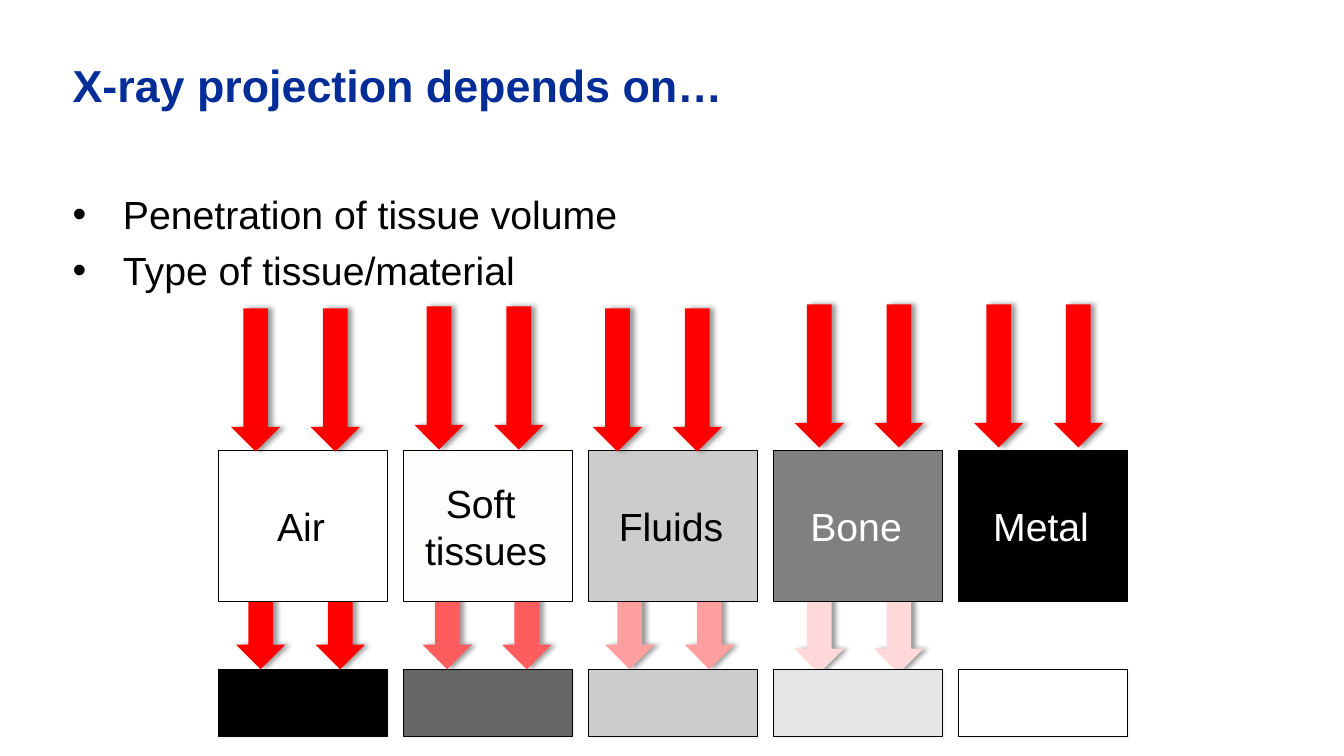
"""Build the slide on how tissue type affects X-ray projection."""
import pptx
import pptx.dml.color
import pptx.enum.shapes
import pptx.enum.text
import pptx.oxml
import pptx.oxml.ns
import pptx.util
from lxml import etree

Inches = pptx.util.Inches
Pt = pptx.util.Pt
RGBColor = pptx.dml.color.RGBColor
MSO_SHAPE = pptx.enum.shapes.MSO_SHAPE
MSO_ANCHOR = pptx.enum.text.MSO_ANCHOR
PP_ALIGN = pptx.enum.text.PP_ALIGN
qn = pptx.oxml.ns.qn

NAVY = RGBColor(0x04, 0x2D, 0x98)
BLACK = RGBColor(0x00, 0x00, 0x00)
WHITE = RGBColor(0xFF, 0xFF, 0xFF)
OFF_WHITE = RGBColor(0xFD, 0xFD, 0xFC)
PALE_GREY = RGBColor(0xE6, 0xE6, 0xE6)
LIGHT_GREY = RGBColor(0xCC, 0xCC, 0xCC)
MID_GREY = RGBColor(0x80, 0x80, 0x80)
DARK_GREY = RGBColor(0x66, 0x66, 0x66)
WARM_GREY = RGBColor(0xF6, 0xF4, 0xF2)
RED = RGBColor(0xFF, 0x00, 0x00)
RED_STRONG = RGBColor(0xFF, 0x5D, 0x5D)
RED_SOFT = RGBColor(0xFF, 0x9F, 0x9F)
RED_FAINT = RGBColor(0xFF, 0xD9, 0xD9)

TITLE_FONT = {"name": "Arial", "size": Pt(32), "bold": True}
BODY_FONT = {"name": "Arial", "size": Pt(28), "bold": False}
ARROW_SHADOW = {"color": BLACK, "alpha": 40, "blur": 4, "dist": 3, "angle": 0}
FILM_SHADOW = {"color": WARM_GREY, "alpha": 75, "blur": 0, "dist": 2, "angle": 45}

LEFT, PITCH, WIDTH = 2.17, 1.835, 1.67
ARROW_WIDTH, ARROW_HEIGHT, ARROW_GAP = 0.49, 1.42, 0.79

MATERIALS = [
    {"lines": ["Air"], "fill": WHITE, "text": BLACK, "film": BLACK,
     "beam": (2.29, 3.06), "exit": (2.34, 5.22, RED)},
    {"lines": ["Soft ", "tissues"], "fill": OFF_WHITE, "text": BLACK, "film": DARK_GREY,
     "beam": (4.11, 3.04), "exit": (4.19, 5.22, RED_STRONG)},
    {"lines": ["Fluids"], "fill": LIGHT_GREY, "text": BLACK, "film": LIGHT_GREY,
     "beam": (5.88, 3.06), "exit": (6.0, 5.22, RED_SOFT)},
    {"lines": ["Bone"], "fill": MID_GREY, "text": WHITE, "film": PALE_GREY,
     "beam": (7.88, 3.02), "exit": (7.88, 5.26, RED_FAINT)},
    {"lines": ["Metal"], "fill": BLACK, "text": WHITE, "film": WHITE,
     "beam": (9.66, 3.02), "exit": None},
]


class SlideBuilder:
    """Hold the style and the current slide."""

    def __init__(self, prs):
        self.s = prs.slides.add_slide(prs.slide_layouts[5])

    def place(self, sp, x, y, w, h):
        box = {"left": x, "top": y, "width": w, "height": h}
        for name, value in box.items():
            setattr(sp, name, Inches(value))

    def format_frame(self, tf, margins, anchor, wrap):
        names = ("margin_left", "margin_top", "margin_right", "margin_bottom")
        values = dict(zip(names, map(Inches, margins)))
        values.update(vertical_anchor=anchor, word_wrap=wrap)
        for name, value in values.items():
            setattr(tf, name, value)

    def add_lines(self, tf, lines, style, color, align, bullet=False):
        for i, line in enumerate(lines):
            p = tf.paragraphs[0] if i == 0 else tf.add_paragraph()
            p.alignment = align
            if bullet:
                pPr = p._p.get_or_add_pPr()
                pPr.set("marL", str(Inches(0.5)))
                pPr.set("indent", str(-Inches(0.5)))
                etree.SubElement(pPr, qn("a:buFont"), typeface="Arial")
                etree.SubElement(pPr, qn("a:buChar"), char="•")
                if i:
                    p.space_before = Pt(6)
            r = p.add_run()
            r.text = line
            for name, value in style.items():
                setattr(r.font, name, value)
            r.font.color.rgb = color

    def title(self, text):
        sp = self.s.shapes.title
        self.place(sp, 0.72, 0.57, 11.89, 1.06)
        self.format_frame(sp.text_frame, (0, 0, 0, 0), MSO_ANCHOR.TOP, True)
        self.add_lines(sp.text_frame, [text], TITLE_FONT, NAVY, PP_ALIGN.LEFT)

    def bullets(self, lines):
        sp = self.s.shapes.add_textbox(Inches(0.72), Inches(1.89), Inches(10.4), Inches(1.15))
        self.format_frame(sp.text_frame, (0, 0, 0, 0), MSO_ANCHOR.TOP, True)
        self.add_lines(sp.text_frame, lines, BODY_FONT, BLACK, PP_ALIGN.LEFT, bullet=True)

    def shape(self, kind, x, y, w, h, fill, shadow=None):
        sp = self.s.shapes.add_shape(kind, Inches(x), Inches(y), Inches(w), Inches(h))
        sp.fill.solid()
        sp.fill.fore_color.rgb = fill
        sp.shadow.inherit = False
        if shadow:
            effects = sp._element.spPr.find(qn("a:effectLst"))
            outer = etree.SubElement(
                effects, qn("a:outerShdw"), blurRad=str(Pt(shadow["blur"])),
                dist=str(Pt(shadow["dist"])), dir=str(shadow["angle"] * 60000),
                algn="ctr", rotWithShape="0")
            color = etree.SubElement(outer, qn("a:srgbClr"), val=str(shadow["color"]))
            etree.SubElement(color, qn("a:alpha"), val=str(shadow["alpha"] * 1000))
        return sp

    def arrow_pair(self, x, y, fill):
        for i in range(2):
            sp = self.shape(MSO_SHAPE.DOWN_ARROW, x + i * ARROW_GAP, y,
                            ARROW_WIDTH, ARROW_HEIGHT, fill, ARROW_SHADOW)
            sp.line.fill.background()

    def block(self, column, y, h, fill, shadow=None):
        sp = self.shape(MSO_SHAPE.RECTANGLE, LEFT + column * PITCH, y, WIDTH, h, fill, shadow)
        sp.line.color.rgb = BLACK
        sp.line.width = Pt(0.75)
        return sp

    def material(self, column, lines, fill, color):
        tf = self.block(column, 4.47, 1.5, fill).text_frame
        self.format_frame(tf, (0.06, 0.06, 0.1, 0.06), MSO_ANCHOR.MIDDLE, False)
        self.add_lines(tf, lines, BODY_FONT, color, PP_ALIGN.CENTER)


def main():
    prs = pptx.Presentation()
    prs.slide_width, prs.slide_height = Inches(13.33), Inches(7.5)
    slide = SlideBuilder(prs)
    slide.title("X-ray projection depends on…")
    slide.bullets(["Penetration of tissue volume", "Type of tissue/material"])
    for column, m in enumerate(MATERIALS):
        if m["exit"]:
            slide.arrow_pair(*m["exit"])
        slide.material(column, m["lines"], m["fill"], m["text"])
        slide.block(column, 6.64, 0.67, m["film"], FILM_SHADOW)
        slide.arrow_pair(*m["beam"], RED)
    prs.save("out.pptx")


if __name__ == "__main__":
    main()
